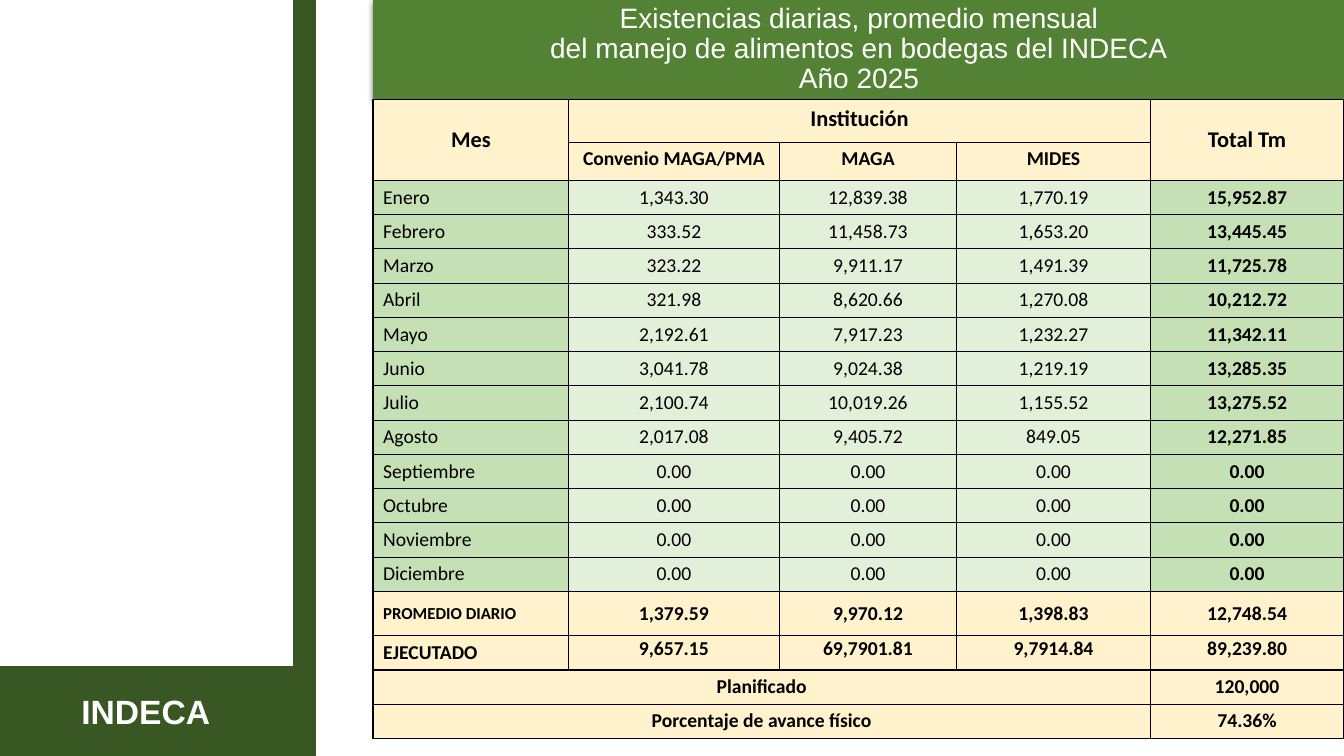
from lxml import etree
from pptx import Presentation
from pptx.dml.color import RGBColor
from pptx.enum.shapes import MSO_SHAPE as Shape
from pptx.enum.text import MSO_ANCHOR as Anchor, PP_ALIGN as Align
from pptx.oxml import parse_xml
from pptx.oxml.ns import nsdecls, qn
from pptx.util import Inches, Pt

DARK = RGBColor(0x38, 0x57, 0x23)
GREEN = RGBColor(0x54, 0x82, 0x35)
MID = RGBColor(0xC5, 0xE0, 0xB4)
PALE = RGBColor(0xE2, 0xF0, 0xD9)
CREAM = RGBColor(0xFF, 0xF2, 0xCC)
WHITE = RGBColor(0xFF, 0xFF, 0xFF)
BLACK = RGBColor(0, 0, 0)

TITLE = ("Existencias diarias, promedio mensual\v"
         "del manejo de alimentos en bodegas del INDECA\vAño 2025")
ZERO = ["0.00"] * 4
HEAD = [
    ["Mes", "Institución", "", "", "Total Tm"],
    ["", "Convenio MAGA/PMA", "MAGA", "MIDES", ""],
]
MONTHS = [
    ["Enero", "1,343.30", "12,839.38", "1,770.19", "15,952.87"],
    ["Febrero", "333.52", "11,458.73", "1,653.20", "13,445.45"],
    ["Marzo", "323.22", "9,911.17", "1,491.39", "11,725.78"],
    ["Abril", "321.98", "8,620.66", "1,270.08", "10,212.72"],
    ["Mayo", "2,192.61", "7,917.23", "1,232.27", "11,342.11"],
    ["Junio", "3,041.78", "9,024.38", "1,219.19", "13,285.35"],
    ["Julio", "2,100.74", "10,019.26", "1,155.52", "13,275.52"],
    ["Agosto", "2,017.08", "9,405.72", "849.05", "12,271.85"],
    ["Septiembre", *ZERO],
    ["Octubre", *ZERO],
    ["Noviembre", *ZERO],
    ["Diciembre", *ZERO],
]
TOTALS = [
    ["PROMEDIO DIARIO", "1,379.59", "9,970.12", "1,398.83", "12,748.54"],
    ["EJECUTADO", "9,657.15", "69,7901.81", "9,7914.84", "89,239.80"],
    ["Planificado", "", "", "", "120,000"],
    ["Porcentaje de avance físico", "", "", "", "74.36%"],
]
ROWS = HEAD + MONTHS + TOTALS
MEAN = len(HEAD + MONTHS)
DONE = MEAN + 1
COLS = [1.94, 2.09, 1.76, 1.92, 1.92]
TALL = {0: 0.42, 1: 0.38, MEAN: 0.44}
MERGES = [((0, 0), (1, 0)), ((0, 1), (0, 3)), ((0, 4), (1, 4)),
          ((DONE + 1, 0), (DONE + 1, 3)), ((DONE + 2, 0), (DONE + 2, 3))]


def write(frame, text, align, **style):
    """Put one paragraph in a frame and format its runs."""
    para = frame.paragraphs[0]
    para.text = text
    para.alignment = align
    look = {"name": "Calibri", "size": Pt(14), "bold": False} | style
    color = look.pop("color", BLACK)
    for run in para.runs:
        for key, value in look.items():
            setattr(run.font, key, value)
        run.font.color.rgb = color
    return para


def block(slide, box, color, edge=None):
    """Draw a plain rectangle, with an outline if edge is given."""
    rect = slide.shapes.add_shape(Shape.RECTANGLE, *map(Inches, box))
    rect.shadow.inherit = False
    rect.fill.solid()
    rect.fill.fore_color.rgb = color
    if edge:
        rect.line.color.rgb = color
        rect.line.width = Pt(edge)
    else:
        rect.line.fill.background()
    return rect


def frame_side(slide, box):
    """Foot and right bar of the left panel, with the name."""
    x, y, w, h = box
    bar, foot = 0.22, 0.87
    block(slide, (x, y + h - foot, w - bar, foot), DARK, 3)
    block(slide, (x + w - bar, y, bar, h), DARK, 1)
    label = slide.shapes.add_textbox(
        *map(Inches, (x + 0.1, y + h - 0.69, w - bar - 0.22, 0.5)))
    label.text_frame.word_wrap = True
    write(label.text_frame, "INDECA", Align.CENTER,
          name="Arial", size=Pt(24), bold=True, color=WHITE)


def banner(slide, box):
    """Title band with a soft shadow."""
    band = block(slide, box, GREEN)
    effects = band._element.spPr.find(qn("a:effectLst"))
    effects.append(parse_xml(
        f'<a:outerShdw {nsdecls("a")} blurRad="{Pt(4.5)}" dist="{Pt(1.5)}" '
        'dir="5400000" algn="t" rotWithShape="0"><a:srgbClr val="000000">'
        '<a:alpha val="63000"/></a:srgbClr></a:outerShdw>'))
    frame = band.text_frame
    frame.word_wrap = True
    frame.vertical_anchor = Anchor.MIDDLE
    para = write(frame, TITLE, Align.CENTER,
                 name="Arial", size=Pt(20), color=WHITE)
    para.line_spacing = 0.9


def border(cell):
    """Black one-point lines on all four sides, placed before the fill."""
    props = cell._tc.get_or_add_tcPr()
    for i, side in enumerate(("lnL", "lnR", "lnT", "lnB")):
        line = etree.Element(qn("a:" + side), w=str(Pt(1)))
        fill = etree.SubElement(line, qn("a:solidFill"))
        etree.SubElement(fill, qn("a:srgbClr"), val=str(BLACK))
        props.insert(i, line)


def fill_cell(cell, text, r, c):
    """Style one cell by its row and column."""
    month = len(HEAD) <= r < MEAN
    color = CREAM if not month else MID if c in (0, 4) else PALE
    size = 16 if r == 0 else 12 if (r, c) == (MEAN, 0) else 14
    left = c == 0 and len(HEAD) <= r <= DONE
    cell.fill.solid()
    cell.fill.fore_color.rgb = color
    border(cell)
    if r == MEAN or (r == 0 and c in (0, 4)):
        cell.vertical_anchor = Anchor.MIDDLE
    if r == DONE and c:
        for side in ("left", "right", "top"):
            setattr(cell, "margin_" + side, Inches(0.01))
        cell.margin_bottom = 0
    if text:
        write(cell.text_frame, text, Align.LEFT if left else Align.CENTER,
              size=Pt(size), bold=not month or c == 4)


def stock(slide, box):
    """Monthly stock table."""
    table = slide.shapes.add_table(
        len(ROWS), len(COLS), *map(Inches, box)).table
    table.first_row = table.horz_banding = False
    for col, width in zip(table.columns, COLS):
        col.width = Inches(width)
    for r, (row, texts) in enumerate(zip(table.rows, ROWS)):
        row.height = Inches(TALL.get(r, 0.34))
        for c, text in enumerate(texts):
            fill_cell(table.cell(r, c), text, r, c)
    for start, end in MERGES:
        table.cell(*start).merge(table.cell(*end))


def main():
    deck = Presentation()
    deck.slide_width, deck.slide_height = Inches(13.33), Inches(7.5)
    slide = deck.slides.add_slide(deck.slide_layouts[6])
    frame_side(slide, (0, 0, 3.13, 7.5))
    banner(slide, (3.7, 0, 9.64, 0.98))
    stock(slide, (3.7, 0.99, 9.64, 6.36))
    deck.save("out.pptx")


if __name__ == "__main__":
    main()
